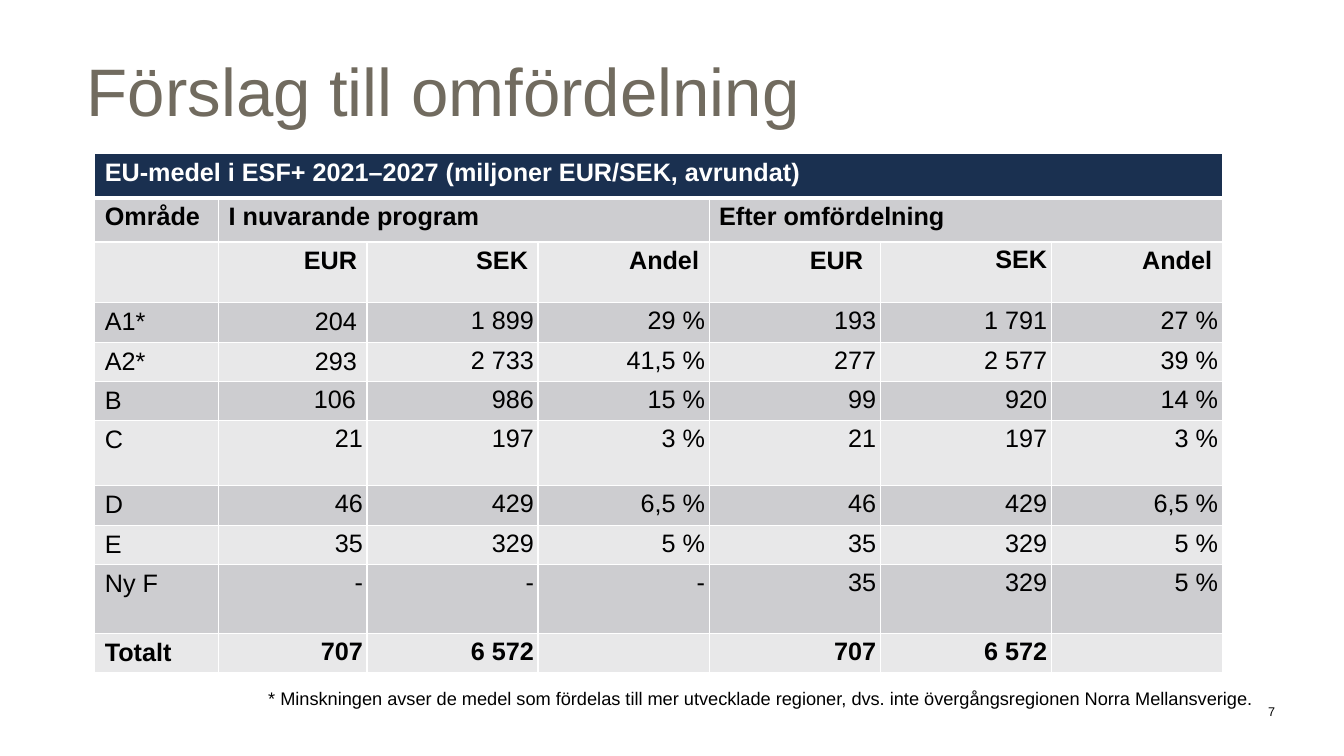
"""Build a slide with a table of the proposed reallocation of ESF+ funds."""
from dataclasses import dataclass

from lxml import etree
from pptx import Presentation
from pptx.dml.color import RGBColor
from pptx.enum.text import MSO_ANCHOR, MSO_AUTO_SIZE, PP_ALIGN
from pptx.oxml.ns import qn
from pptx.util import Pt

LEFT, RIGHT = PP_ALIGN.LEFT, PP_ALIGN.RIGHT
TOP, MIDDLE, BOTTOM = MSO_ANCHOR.TOP, MSO_ANCHOR.MIDDLE, MSO_ANCHOR.BOTTOM
NO_FIT, GROW = MSO_AUTO_SIZE.NONE, MSO_AUTO_SIZE.SHAPE_TO_FIT_TEXT

TITLE = "Förslag till omfördelning"
NOTE = ("* Minskningen avser de medel som fördelas till mer utvecklade regioner, "
        "dvs. inte övergångsregionen Norra Mellansverige.")
PAGE = "7"
ROWS = [
    ["EU-medel i ESF+ 2021–2027 (miljoner EUR/SEK, avrundat)", "", "", "", "", "", ""],
    ["Område", "I nuvarande program", "", "", "Efter omfördelning", "", ""],
    ["", "EUR", "SEK", "Andel", "EUR ", "SEK", "Andel"],
    ["A1*", "204", "1 899", "29 %", "193", "1 791", "27 %"],
    ["A2*", "293", "2 733", "41,5 %", "277", "2 577", "39 %"],
    ["B", "106 ", "986", "15 %", "99", "920", "14 %"],
    ["C", "21", "197", "3 %", "21", "197", "3 %"],
    ["D", "46", "429", "6,5 %", "46", "429", "6,5 %"],
    ["E", "35", "329", "5 %", "35", "329", "5 %"],
    ["Ny F", "-", "-", "-", "35", "329", "5 %"],
    ["Totalt", "707", "6 572", "", "707", "6 572", ""],
]
MERGES = [(0, 0, 6), (1, 1, 3), (1, 4, 6)]
HEAD_ROWS = 3
TIGHT_HEADS = {(2, 5)}
WIDE_VALUES = {(3, 1), (4, 1)}
COL_WIDTHS = [88.5, 106] + [122.2] * 5
ROW_HEIGHTS = [31.5, 31.5, 43.5, 28.1, 28.1, 28.1, 46.5, 28.1, 28.1, 49.2, 28.1]


@dataclass(frozen=True)
class Theme:
    font: str = "Arial"
    title: str = "716B5F"
    ink: str = "000000"
    white: str = "FFFFFF"
    header: str = "1A3050"
    bands: tuple = ("E8E8E9", "CDCDD0")
    title_size: int = 48
    table_size: int = 18
    note_size: int = 13
    page_size: int = 9


THEME = Theme()


def put_text(tf, text, size, color=THEME.ink, bold=False, align=LEFT,
             spacing=None, after=None):
    p = tf.paragraphs[0]
    p.alignment = align
    if spacing is not None:
        p.line_spacing = spacing
    if after is not None:
        p.space_after = Pt(after)
    p.font.size = Pt(size)
    if text:
        r = p.add_run()
        r.text = text
        r.font.name, r.font.size, r.font.bold = THEME.font, Pt(size), bold
        r.font.color.rgb = RGBColor.from_string(color)


def set_frame(sp, box, insets, anchor, fit=NO_FIT, wrap=True):
    sp.left, sp.top, sp.width, sp.height = (Pt(v) for v in box)
    tf = sp.text_frame
    tf.margin_left, tf.margin_top, tf.margin_right, tf.margin_bottom = (
        Pt(v) for v in insets)
    tf.vertical_anchor, tf.auto_size, tf.word_wrap = anchor, fit, wrap
    return tf


def set_borders(cell, **widths):
    tc_pr = cell._tc.get_or_add_tcPr()
    for side in "LRTB":
        ln = etree.SubElement(tc_pr, qn(f"a:ln{side}"), w=str(Pt(widths.get(side, 1))))
        fill = etree.SubElement(ln, qn("a:solidFill"))
        etree.SubElement(fill, qn("a:srgbClr"), val=THEME.white)


def fill_cell(cell, row, col, text):
    heading = row < HEAD_ROWS
    wide = (col == 0 or (row, col) in WIDE_VALUES
            or heading and (row, col) not in TIGHT_HEADS)
    set_borders(cell, T=3 if row == 1 else 1, B=3 if row == 0 else 1)
    cell.fill.solid()
    cell.fill.fore_color.rgb = RGBColor.from_string(
        THEME.bands[row % 2] if row else THEME.header)
    cell.margin_left = cell.margin_right = Pt(7.2 if wide else 3)
    cell.margin_top = cell.margin_bottom = Pt(3.6 if wide else 0)
    put_text(cell.text_frame, text, THEME.table_size,
             color=THEME.ink if row else THEME.white,
             bold=heading or row == len(ROWS) - 1,
             align=RIGHT if col and row > 1 else LEFT,
             spacing=None if wide else 1.15, after=None if wide else 5)


def add_funds_table(slide, left, top):
    table = slide.shapes.add_table(
        len(ROWS), len(COL_WIDTHS), Pt(left), Pt(top),
        Pt(sum(COL_WIDTHS)), Pt(sum(ROW_HEIGHTS))).table
    table.first_row = table.horz_banding = False
    for column, width in zip(table.columns, COL_WIDTHS):
        column.width = Pt(width)
    for i, values in enumerate(ROWS):
        table.rows[i].height = Pt(ROW_HEIGHTS[i])
        for j, text in enumerate(values):
            fill_cell(table.cell(i, j), i, j, text)
    for row, first, last in MERGES:
        table.cell(row, first).merge(table.cell(row, last))


def main():
    prs = Presentation()
    prs.slide_width, prs.slide_height = Pt(960), Pt(540)
    slide = prs.slides.add_slide(prs.slide_layouts[5])

    tf = set_frame(slide.shapes.title, (62, 28, 849, 81.5), (0, 3.6, 0, 3.6), MIDDLE)
    put_text(tf, TITLE, THEME.title_size, color=THEME.title, spacing=0.85)

    add_funds_table(slide, 67.7, 109.8)

    sp = slide.shapes.add_textbox(0, 0, 0, 0)
    tf = set_frame(sp, (872.6, 496, 38.2, 17.3), (0, 0, 0, 0), BOTTOM)
    put_text(tf, PAGE, THEME.page_size, align=RIGHT)

    sp = slide.shapes.add_textbox(0, 0, 0, 0)
    tf = set_frame(sp, (184.5, 487.5, 770, 23), (7.2, 3.6, 7.2, 3.6), TOP, fit=GROW)
    put_text(tf, NOTE, THEME.note_size)

    prs.save("out.pptx")


if __name__ == "__main__":
    main()
